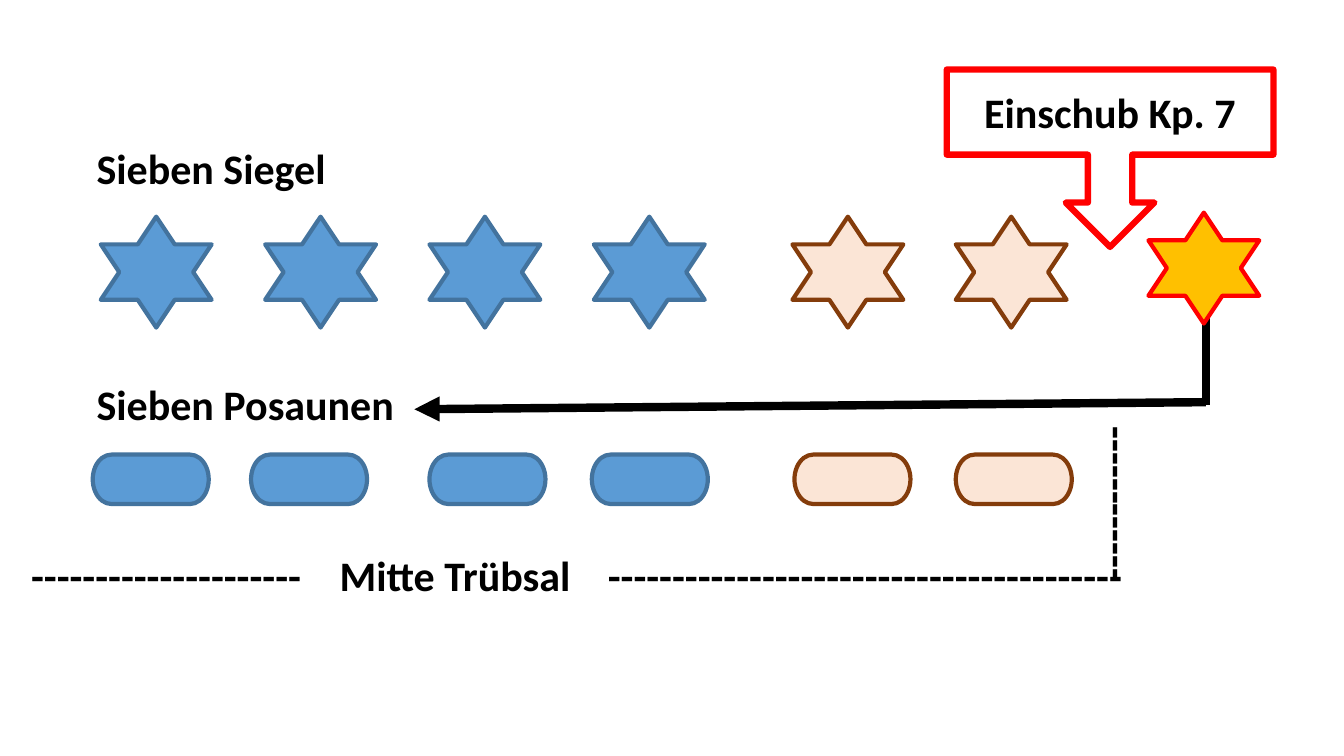
import pptx
import pptx.dml.color
import pptx.enum.shapes
import pptx.enum.text
import pptx.oxml
import pptx.oxml.ns
import pptx.util

SHAPES = pptx.enum.shapes.MSO_SHAPE
INCH = pptx.util.Inches
SLIDE_SIZE = (13.33, 7.5)
FONT = {"name": "Calibri", "size": pptx.util.Pt(30), "bold": True}

# fill, line
BLUE = ("5B9BD5", "43739E")
PEACH = ("FBE5D6", "843C0B")
GOLD = ("FFC000", "FF0000")

# text, (left, top, width, height), rotation, tab stops
LABELS = [
    ("Sieben Siegel", (0.86, 1.36, 2.5, 0.61), 0, []),
    ("Sieben Posaunen", (0.86, 3.71, 3.18, 0.61), 0, []),
    ("-" * 21 + "\tMitte Trübsal\t" + "-" * 40, (0.21, 5.4, 11.22, 0.61), 0, [3.06, 5.72]),
    ("-" * 12, (10.23, 4.7, 1.74, 0.61), 90, []),
]

# shape kind, top, (width, height), colours, left edges
SEAL_STEP = 1.63
SEAL_SIZE = (1.1, 1.1)
TRUMPET_SIZE = (1.15, 0.49)
ROWS = [
    (SHAPES.STAR_6_POINT, 2.15, SEAL_SIZE, BLUE, [1 + SEAL_STEP * i for i in range(4)]),
    (SHAPES.STAR_6_POINT, 2.15, SEAL_SIZE, PEACH, [7.86, 9.48]),
    (SHAPES.FLOWCHART_TERMINATOR, 4.51, TRUMPET_SIZE, BLUE, [0.92, 2.49, 4.26, 5.87]),
    (SHAPES.FLOWCHART_TERMINATOR, 4.51, TRUMPET_SIZE, PEACH, [7.88, 9.48]),
]
SEVENTH_SEAL = (SHAPES.STAR_6_POINT, 2.11, SEAL_SIZE, GOLD, [11.39])

# start, end, arrowhead at the end
ARROW_PARTS = [
    ((11.96, 2.59), (11.96, 4.02), False),
    ((11.96, 3.99), (4.11, 4.06), True),
]
CALLOUT = ("Einschub Kp. 7", (9.39, 0.69, 3.24, 1.76), (0.25, 0.25, 0.25, 0.48))


def color(value):
    return pptx.dml.color.RGBColor.from_string(value)


def append_xml(parent, tag, **attributes):
    element = pptx.oxml.parse_xml(f"<a:{tag} {pptx.oxml.ns.nsdecls('a')}/>")
    for name, value in attributes.items():
        element.set(name, str(value))
    parent.append(element)
    return element


def write(frame, text):
    frame.text = text
    font = frame.paragraphs[0].runs[0].font
    for name, value in FONT.items():
        setattr(font, name, value)
    font.color.rgb = color("000000")


def add_label(slide, text, box, rotation, tab_stops):
    label = slide.shapes.add_textbox(*map(INCH, box))
    label.rotation = rotation
    frame = label.text_frame
    frame.word_wrap = False
    frame.auto_size = pptx.enum.text.MSO_AUTO_SIZE.SHAPE_TO_FIT_TEXT
    write(frame, text)
    if tab_stops:
        properties = frame.paragraphs[0]._p.get_or_add_pPr()
        tab_list = append_xml(properties, "tabLst")
        for stop in tab_stops:
            append_xml(tab_list, "tab", pos=INCH(stop), algn="l")


def add_outlined(slide, kind, box, fill, line, line_width):
    shape = slide.shapes.add_shape(kind, *map(INCH, box))
    shape.shadow.inherit = False
    if fill:
        shape.fill.solid()
        shape.fill.fore_color.rgb = color(fill)
    else:
        shape.fill.background()
    shape.line.color.rgb = color(line)
    shape.line.width = pptx.util.Pt(line_width)
    return shape


def add_row(slide, kind, top, size, colors, lefts):
    for left in lefts:
        add_outlined(slide, kind, (left, top, *size), *colors, 3)


def add_arrow_part(slide, start, end, arrowhead):
    connector = slide.shapes.add_connector(
        pptx.enum.shapes.MSO_CONNECTOR.STRAIGHT, *map(INCH, start + end))
    connector.line.color.rgb = color("000000")
    connector.line.width = pptx.util.Pt(6)
    if arrowhead:
        append_xml(connector.line._get_or_add_ln(), "tailEnd", type="triangle")
    append_xml(connector._element.spPr, "effectLst")


def add_callout(slide, text, box, adjustments):
    callout = add_outlined(slide, SHAPES.DOWN_ARROW_CALLOUT, box, None, "FF0000", 4.5)
    for index, value in enumerate(adjustments):
        callout.adjustments[index] = value
    frame = callout.text_frame
    frame.word_wrap = True
    frame.vertical_anchor = pptx.enum.text.MSO_ANCHOR.MIDDLE
    write(frame, text)
    frame.paragraphs[0].alignment = pptx.enum.text.PP_ALIGN.CENTER


def main():
    presentation = pptx.Presentation()
    presentation.slide_width, presentation.slide_height = map(INCH, SLIDE_SIZE)
    slide = presentation.slides.add_slide(presentation.slide_layouts.get_by_name("Blank"))
    for label in LABELS:
        add_label(slide, *label)
    for row in ROWS:
        add_row(slide, *row)
    for part in ARROW_PARTS:
        add_arrow_part(slide, *part)
    add_row(slide, *SEVENTH_SEAL)
    add_callout(slide, *CALLOUT)
    presentation.save("out.pptx")


if __name__ == "__main__":
    main()
